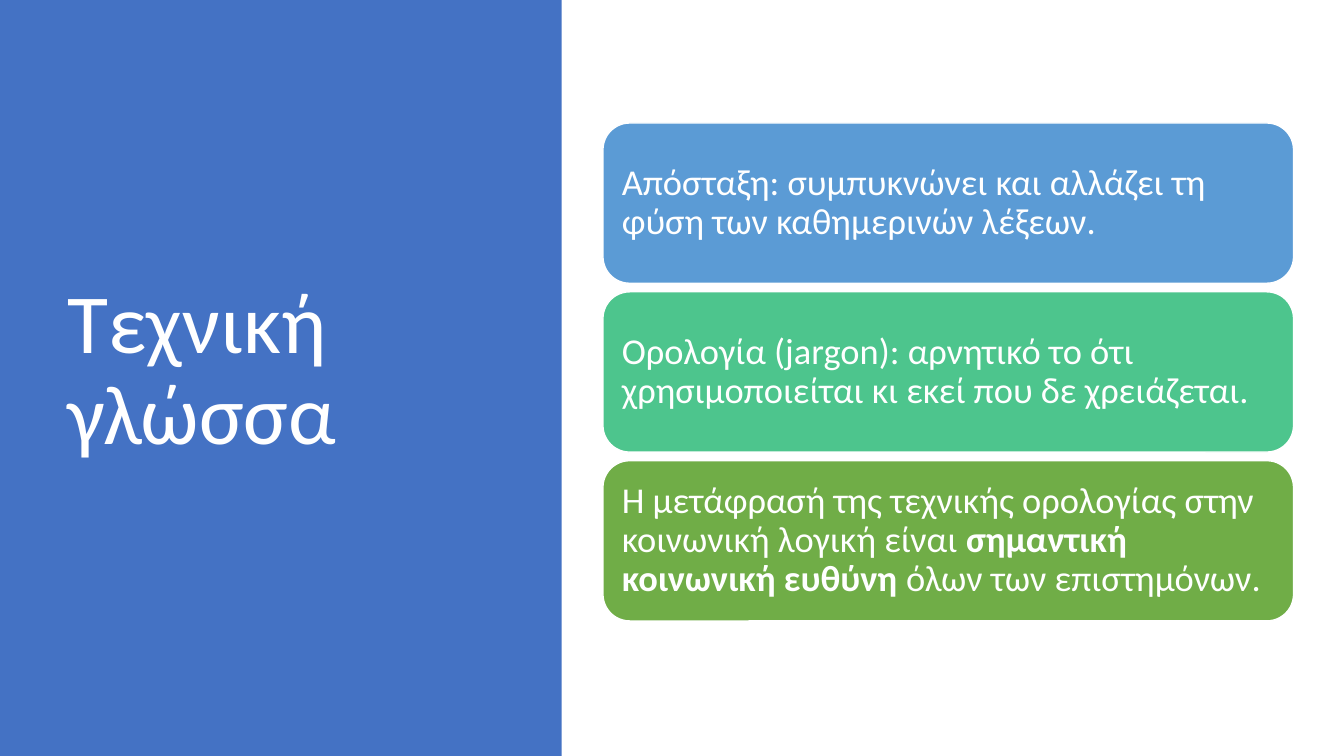
from dataclasses import dataclass

from pptx import Presentation
from pptx.dml.color import RGBColor
from pptx.enum.shapes import MSO_SHAPE
from pptx.enum.text import MSO_ANCHOR, PP_ALIGN
from pptx.shapes.autoshape import Shape
from pptx.slide import Slide
from pptx.util import Inches, Pt


@dataclass(frozen=True)
class Theme:
    font: str = "Calibri"
    title_size: int = 60
    card_size: int = 26
    line_spacing: float = 0.9
    white: str = "FFFFFF"
    panel: str = "4472C4"
    blue: str = "5B9BD5"
    teal: str = "4DC58D"
    green: str = "70AD47"


@dataclass(frozen=True)
class Span:
    text: str
    bold: bool = False


@dataclass(frozen=True)
class Card:
    color: str
    spans: tuple[Span, ...]


THEME = Theme()

CARDS = (
    Card(THEME.blue, (
        Span("Απόσταξη: συμπυκνώνει και αλλάζει τη φύση των καθημερινών λέξεων."),
    )),
    Card(THEME.teal, (
        Span("Oρολογία (jargon): αρνητικό το ότι χρησιμοποιείται κι εκεί που δε χρειάζεται."),
    )),
    Card(THEME.green, (
        Span("Η μετάφρασή της τεχνικής ορολογίας στην κοινωνική λογική είναι "),
        Span("σημαντική κοινωνική ευθύνη ", bold=True),
        Span("όλων των επιστημόνων."),
    )),
)

# Card column, in inches
CARD_LEFT, CARD_TOP = 5.98, 1.22
CARD_WIDTH, CARD_HEIGHT = 6.85, 1.59
CARD_STEP = 1.675
CARD_INSET = 0.11


def add_block(page: Slide, kind: MSO_SHAPE, left: float, top: float,
              width: float, height: float, color: str) -> Shape:
    """Add a flat filled shape without outline or shadow."""
    block = page.shapes.add_shape(
        kind, Inches(left), Inches(top), Inches(width), Inches(height))
    block.shadow.inherit = False
    block.fill.solid()
    block.fill.fore_color.rgb = RGBColor.from_string(color)
    block.line.fill.background()
    return block


def write_spans(box: Shape, spans: tuple[Span, ...], size: int) -> None:
    """Write one left-aligned, vertically centred paragraph."""
    frame = box.text_frame
    frame.word_wrap = True
    frame.vertical_anchor = MSO_ANCHOR.MIDDLE
    para = frame.paragraphs[0]
    para.alignment = PP_ALIGN.LEFT
    para.line_spacing = THEME.line_spacing
    for span in spans:
        run = para.add_run()
        run.text = span.text
        run.font.name = THEME.font
        run.font.size = Pt(size)
        run.font.bold = span.bold
        run.font.color.rgb = RGBColor.from_string(THEME.white)


def add_card(page: Slide, card: Card, top: float) -> None:
    """Add a rounded card with its statement."""
    box = add_block(page, MSO_SHAPE.ROUNDED_RECTANGLE, CARD_LEFT, top,
                    CARD_WIDTH, CARD_HEIGHT, card.color)
    box.line.color.rgb = RGBColor.from_string(THEME.white)
    box.line.width = Pt(1)
    frame = box.text_frame
    frame.margin_left = frame.margin_right = Inches(CARD_INSET)
    frame.margin_top = frame.margin_bottom = Inches(CARD_INSET)
    write_spans(box, card.spans, THEME.card_size)


def main() -> None:
    deck = Presentation()
    deck.slide_width, deck.slide_height = Inches(13.33), Inches(7.5)
    page = deck.slides.add_slide(deck.slide_layouts[6])

    # Title panel
    add_block(page, MSO_SHAPE.RECTANGLE, 0, 0, 5.57, 7.5, THEME.panel)
    title = page.shapes.add_textbox(
        Inches(0.57), Inches(0.68), Inches(4.16), Inches(6.02))
    write_spans(title, (Span("Τεχνική γλώσσα"),), THEME.title_size)

    # Statement cards
    for index, card in enumerate(CARDS):
        add_card(page, card, CARD_TOP + index * CARD_STEP)

    deck.save("out.pptx")


if __name__ == "__main__":
    main()
